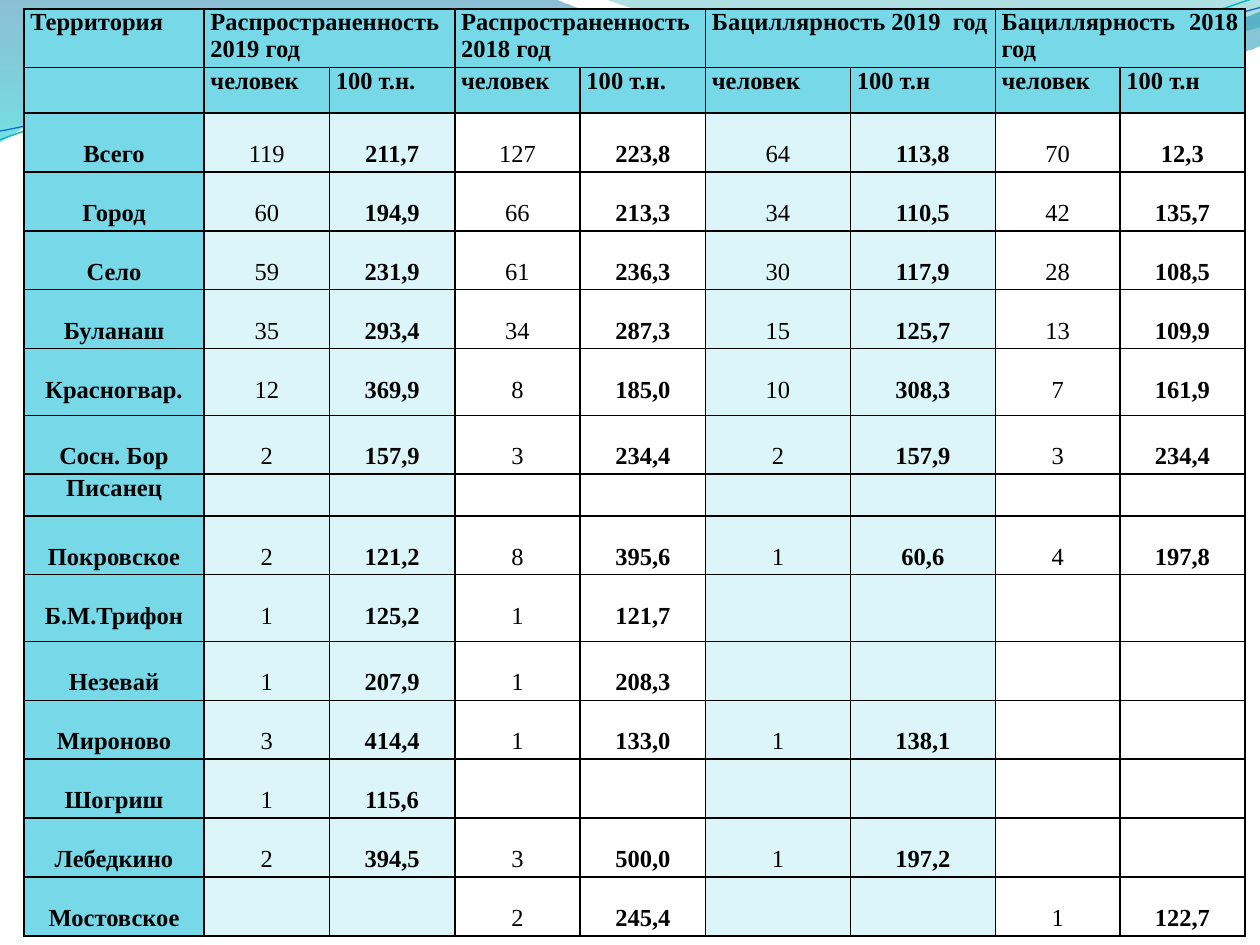
from dataclasses import dataclass
from typing import NamedTuple, Optional

from lxml import etree
from pptx import Presentation
from pptx import util as u
from pptx.dml.color import RGBColor
from pptx.enum import text
from pptx.oxml import ns


@dataclass(frozen=True)
class Theme:
    font: str = "Times New Roman"
    size: float = 14
    ink: str = "000000"
    header: str = "77D9E8"
    tint: str = "DBF5F9"
    border: float = 1


class Stop(NamedTuple):
    position: float
    color: str
    opacity: int


class Wave(NamedTuple):
    start: tuple
    segments: tuple
    stops: tuple = ()
    line: Optional[tuple] = None


class CellStyle(NamedTuple):
    fill: Optional[str]
    bold: bool
    alignment: text.PP_ALIGN
    top: float = 0


THEME = Theme()

WAVES = (
    Wave((0, 0), (
        (4.4, -0.01),
        (4.76, 0.17, 6.64, 0.63, 7.58, 0.63),
        (8.53, 0.63, 9.58, 0.26, 10, 0.09),
        (10.01, 0.36),
        (9.83, 0.44, 8.7, 0.76, 7.46, 0.75),
        (6.22, 0.75, 3.82, 0.28, 2.57, 0.34),
        (1.29, 0.36, 0.46, 0.83, -0.01, 1.13),
        (0, 0),
    ), stops=(Stop(0, "0074A1", 45), Stop(1, "00C6CF", 55))),
    Wave((4.79, -0.01), (
        (5.09, 0.11, 6.82, 0.62, 7.69, 0.65),
        (8.56, 0.69, 9.61, 0.32, 10, 0.21),
        (10, 0),
        (4.79, -0.01),
    ), stops=(Stop(0, "00A1A9", 30), Stop(0.8, "008BBF", 45))),
    Wave((0, 1.11), (
        (0.48, 0.93, 1.58, 0.57, 2.77, 0.52),
        (3.95, 0.47, 5.93, 0.89, 7.13, 0.8),
        (8.33, 0.71, 9.38, 0.15, 9.98, -0.02),
    ), line=("0AB8BF", 0.85)),
    Wave((0, 1.04), (
        (0.47, 0.96, 1.64, 0.61, 2.83, 0.56),
        (4.03, 0.51, 5.97, 0.84, 7.17, 0.75),
        (8.36, 0.67, 9.41, 0.21, 10, 0.06),
    ), line=("0F6FC6", 0.75)),
)

HEADINGS = (
    "Территория", "Распространенность\n2019 год", "", "Распространенность\n2018 год", "",
    "Бациллярность 2019  год", "", "Бациллярность 2018 год", "",
)
UNITS = ("",) + ("человек", "100 т.н.") * 2 + ("человек", "100 т.н") * 2
TERRITORIES = (
    ("Всего", "119", "211,7", "127", "223,8", "64", "113,8", "70", "12,3"),
    ("Город", "60", "194,9", "66", "213,3", "34", "110,5", "42", "135,7"),
    ("Село", "59", "231,9", "61", "236,3", "30", "117,9", "28", "108,5"),
    ("Буланаш", "35", "293,4", "34", "287,3", "15", "125,7", "13", "109,9"),
    ("Красногвар.", "12", "369,9", "8", "185,0", "10", "308,3", "7", "161,9"),
    ("Сосн. Бор", "2", "157,9", "3", "234,4", "2", "157,9", "3", "234,4"),
    ("Писанец", "", "", "", "", "", "", "", ""),
    ("Покровское", "2", "121,2", "8", "395,6", "1", "60,6", "4", "197,8"),
    ("Б.М.Трифон", "1", "125,2", "1", "121,7", "", "", "", ""),
    ("Незевай", "1", "207,9", "1", "208,3", "", "", "", ""),
    ("Мироново", "3", "414,4", "1", "133,0", "1", "138,1", "", ""),
    ("Шогриш", "1", "115,6", "", "", "", "", "", ""),
    ("Лебедкино", "2", "394,5", "3", "500,0", "1", "197,2", "", ""),
    ("Мостовское", "", "", "2", "245,4", "", "", "1", "122,7"),
)
ROWS = (HEADINGS, UNITS) + TERRITORIES
TABLE_WIDTH, TABLE_HEIGHT = 9.69, 7.36
SPECIAL_COLUMNS = {0: 1.43, 5: 1.15, 6: 1.15, 7: 0.99, 8: 0.99}
SPECIAL_ROWS = {1: 0.36, 6: 0.53, 8: 0.33, 10: 0.53}


def track_sizes(count: int, total: float, special: dict) -> list:
    regular = (total - sum(special.values())) / (count - len(special))
    return [special.get(index, regular) for index in range(count)]


def bend_segments(shape, segments: tuple) -> None:
    steps = iter(list(shape._element.iter(ns.qn("a:lnTo"))))
    for segment in segments:
        first = next(steps)
        if len(segment) == 2:
            continue
        curve = etree.Element(ns.qn("a:cubicBezTo"))
        first.addprevious(curve)
        for step in (first, next(steps), next(steps)):
            curve.append(step[0])
            step.getparent().remove(step)


def draw_wave(slide, wave: Wave) -> None:
    points = [
        (u.Inches(x), u.Inches(y))
        for segment in wave.segments
        for x, y in zip(segment[::2], segment[1::2])
    ]
    builder = slide.shapes.build_freeform(*map(u.Inches, wave.start), scale=1.0)
    builder.add_line_segments(points, close=bool(wave.stops))
    shape = builder.convert_to_shape()
    bend_segments(shape, wave.segments)
    shape.shadow.inherit = False
    if wave.line:
        color, width = wave.line
        shape.fill.background()
        shape.line.color.rgb = RGBColor.from_string(color)
        shape.line.width = u.Pt(width)
        return
    shape.line.fill.background()
    shape.fill.gradient()
    shape.fill.gradient_angle = 270
    for gradient_stop, stop in zip(shape.fill.gradient_stops, wave.stops):
        gradient_stop.position = stop.position
        gradient_stop.color.rgb = RGBColor.from_string(stop.color)
    colors = shape._element.spPr.iter(ns.qn("a:srgbClr"))
    for color, stop in zip(list(colors), wave.stops):
        etree.SubElement(color, ns.qn("a:alpha"), val=str(stop.opacity * 1000))


def add_borders(cell) -> None:
    properties = cell._tc.get_or_add_tcPr()
    for side in ("lnL", "lnR", "lnT", "lnB"):
        line = etree.SubElement(properties, ns.qn(f"a:{side}"), w=str(u.Pt(THEME.border)))
        fill = etree.SubElement(line, ns.qn("a:solidFill"))
        etree.SubElement(fill, ns.qn("a:srgbClr"), val=THEME.ink)


def cell_style(row: int, column: int, content: str) -> CellStyle:
    if row < 2:
        return CellStyle(THEME.header, True, text.PP_ALIGN.JUSTIFY)
    top = 0.22 if content and content != "Писанец" else 0
    if column == 0:
        fill = THEME.header
    else:
        fill = THEME.tint if column in (1, 2, 5, 6) else None
    return CellStyle(fill, column % 2 == 0, text.PP_ALIGN.CENTER, top)


def fill_cell(cell, content: str, style: CellStyle) -> None:
    add_borders(cell)
    if style.fill:
        cell.fill.solid()
        cell.fill.fore_color.rgb = RGBColor.from_string(style.fill)
    else:
        cell.fill.background()
    margins = {"left": 0.05, "right": 0.05, "top": style.top, "bottom": 0}
    for side, margin in margins.items():
        setattr(cell, f"margin_{side}", u.Inches(margin))
    if not content:
        return
    cell.text = content
    font_format = {"name": THEME.font, "size": u.Pt(THEME.size), "bold": style.bold}
    for paragraph in cell.text_frame.paragraphs:
        paragraph.alignment = style.alignment
        for run in paragraph.runs:
            for name, value in font_format.items():
                setattr(run.font, name, value)
            run.font.color.rgb = RGBColor.from_string(THEME.ink)


def draw_table(slide) -> None:
    bounds = map(u.Inches, (0.19, 0.07, TABLE_WIDTH, TABLE_HEIGHT))
    table = slide.shapes.add_table(len(ROWS), len(UNITS), *bounds).table
    for flag in ("first_row", "horz_banding"):
        setattr(table, flag, False)
    for column, width in zip(table.columns, track_sizes(len(UNITS), TABLE_WIDTH, SPECIAL_COLUMNS)):
        column.width = u.Inches(width)
    for row, height in zip(table.rows, track_sizes(len(ROWS), TABLE_HEIGHT, SPECIAL_ROWS)):
        row.height = u.Inches(height)
    for row, contents in enumerate(ROWS):
        for column, content in enumerate(contents):
            fill_cell(table.cell(row, column), content, cell_style(row, column, content))
    for column in range(1, len(UNITS), 2):
        table.cell(0, column).merge(table.cell(0, column + 1))


def main() -> None:
    presentation = Presentation()
    presentation.slide_width = u.Inches(10)
    presentation.slide_height = u.Inches(7.5)
    slide = presentation.slides.add_slide(presentation.slide_layouts[6])
    for wave in WAVES:
        draw_wave(slide, wave)
    draw_table(slide)
    presentation.save("out.pptx")


if __name__ == "__main__":
    main()
